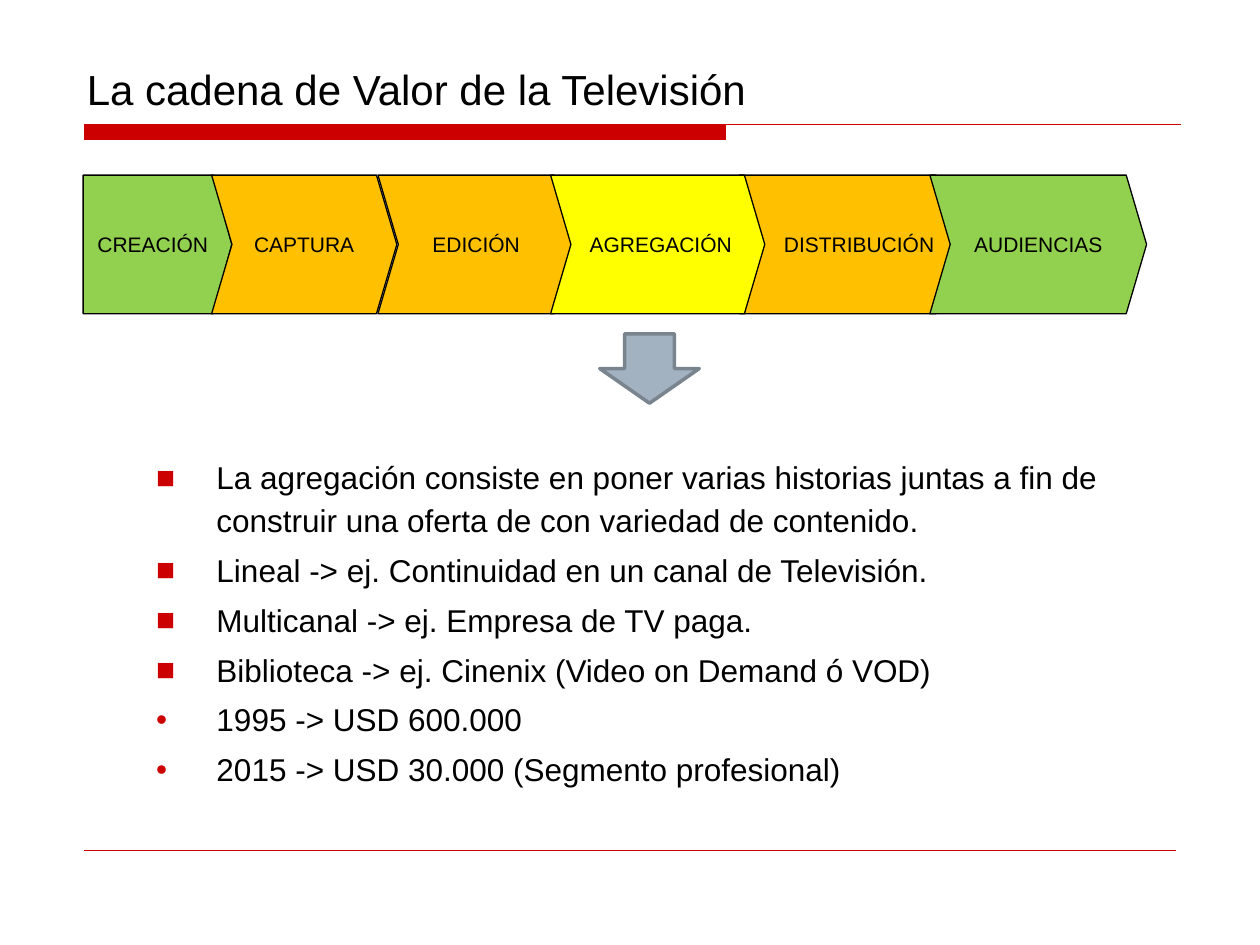
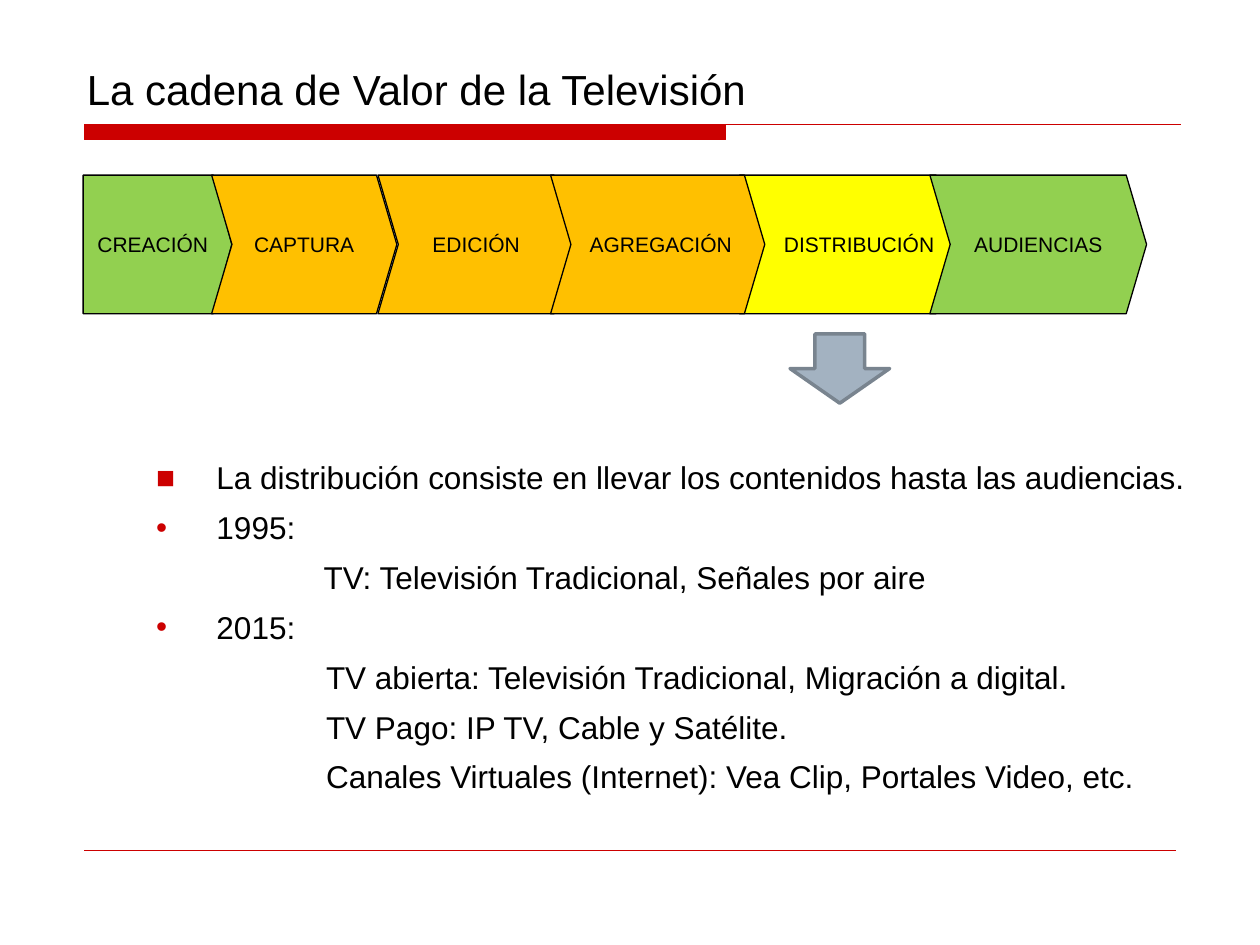
from dataclasses import dataclass

from lxml.etree import SubElement
from pptx import Presentation
from pptx.dml.color import RGBColor
from pptx.enum.shapes import MSO_CONNECTOR as Connector, MSO_SHAPE as Shape
from pptx.enum.text import MSO_ANCHOR as Anchor, PP_ALIGN as Align
from pptx.oxml.ns import qn
from pptx.util import Inches, Pt

FONT = "Arial"
BLACK, RED, YELLOW = "000000", "CC0000", "FFFF00"
GREEN, ORANGE = "92D050", "FFC000"
ARROW_FILL, ARROW_LINE = "A3B2C1", "79848F"
TITLE = "La cadena de Valor de la Televisión"
SQUARE, DOT = "■", "•"
HANGING = (0.99, -0.48)


@dataclass
class Box:
    left: float
    top: float
    width: float
    height: float

    def lengths(self):
        return [Inches(n) for n in (self.left, self.top, self.width, self.height)]


@dataclass
class Stage:
    name: str
    left: float
    width: float
    fill: str = ORANGE
    align: Align = Align.CENTER
    inset: float = 0.1
    outline: Shape = Shape.CHEVRON
    point: float = 0.147


TITLE_BOX = Box(0.59, 0.45, 7.72, 0.5)
HEADER_BOX = Box(0.67, 0.99, 8.7, 0.12)
CHAIN_BOX = Box(0.66, 1.39, 8.44, 1.1)
BODY_BOX = Box(0.63, 3.55, 9.1, 3.2)
FOOTER_BOX = Box(0.67, 6.75, 8.66, 0)

STAGES = [
    Stage("DISTRIBUCIÓN", 5.21, 1.72, align=Align.LEFT, inset=0.19),
    Stage("CREACIÓN", 0, 1.18, GREEN, outline=Shape.PENTAGON, point=0.134),
    Stage("CAPTURA", 1.02, 1.47),
    Stage("EDICIÓN", 2.34, 1.56),
    Stage("AGREGACIÓN", 3.71, 1.7, align=Align.RIGHT),
    Stage("AUDIENCIAS", 6.72, 1.72, GREEN, Align.LEFT, 0.19),
]

SLIDES = [
    ("AGREGACIÓN", [
        ("La agregación consiste en poner varias historias juntas a fin de "
         "construir una oferta de con variedad de contenido.", SQUARE, HANGING),
        ("Lineal -> ej. Continuidad en un canal de Televisión.", SQUARE, HANGING),
        ("Multicanal -> ej. Empresa de TV paga.", SQUARE, HANGING),
        ("Biblioteca -> ej. Cinenix (Video on Demand ó VOD)", SQUARE, HANGING),
        ("1995 -> USD 600.000", DOT, HANGING),
        ("2015 -> USD 30.000 (Segmento profesional)", DOT, HANGING),
    ]),
    ("DISTRIBUCIÓN", [
        ("La distribución consiste en llevar los contenidos hasta las audiencias.",
         SQUARE, HANGING),
        ("1995:", DOT, HANGING),
        ("TV: Televisión Tradicional, Señales por aire", None, (1.84, 0)),
        ("2015:", DOT, HANGING),
        ("TV abierta: Televisión Tradicional, Migración a digital.", None, (1.86, 0)),
        ("TV Pago: IP TV, Cable y Satélite.", None, (1.86, 0)),
        ("Canales Virtuales (Internet): Vea Clip, Portales Video, etc.", None, (1.86, 0)),
    ]),
]


def color(value):
    return RGBColor.from_string(value)


def set_font(paragraph, size):
    paragraph.font.name = FONT
    paragraph.font.size = Pt(size)
    paragraph.font.color.rgb = color(BLACK)


def set_indent(paragraph, margin, indent, bullet):
    properties = paragraph._p.get_or_add_pPr()
    properties.set("marL", str(Inches(margin)))
    properties.set("indent", str(Inches(indent)))
    if bullet:
        bullet_color = SubElement(properties, qn("a:buClr"))
        SubElement(bullet_color, qn("a:srgbClr"), val=RED)
        SubElement(properties, qn("a:buFont"), typeface=FONT)
        SubElement(properties, qn("a:buChar"), char=bullet)
    else:
        SubElement(properties, qn("a:buNone"))


def add_outline(slide, kind, box, fill, line, line_width):
    shape = slide.shapes.add_shape(kind, *box.lengths())
    shape.shadow.inherit = False
    shape.fill.solid()
    shape.fill.fore_color.rgb = color(fill)
    shape.line.color.rgb = color(line)
    shape.line.width = Pt(line_width)
    return shape


def add_rule(slide, box):
    left, top, width, _ = box.lengths()
    rule = slide.shapes.add_connector(Connector.STRAIGHT, left, top, left + width, top)
    rule.line.color.rgb = color(RED)
    rule.line.width = Pt(0.75)
    SubElement(rule._element.spPr, qn("a:effectLst"))


def add_header(slide, box):
    bar = Box(box.left, box.top, 5.09, box.height)
    add_outline(slide, Shape.RECTANGLE, bar, RED, RED, 0.75)
    add_rule(slide, box)


def add_title(slide, box):
    frame = slide.shapes.add_textbox(*box.lengths()).text_frame
    frame.word_wrap = True
    frame.vertical_anchor = Anchor.BOTTOM
    frame.text = TITLE
    set_font(frame.paragraphs[0], 24)


def add_chain(slide, box, active):
    for stage in STAGES:
        place = Box(box.left + stage.left, box.top, stage.width, box.height)
        fill = YELLOW if stage.name == active else stage.fill
        shape = add_outline(slide, stage.outline, place, fill, BLACK, 0.75)
        shape.adjustments[0] = stage.point
        frame = shape.text_frame
        frame.word_wrap = False
        frame.vertical_anchor = Anchor.MIDDLE
        frame.margin_left = Inches(stage.inset)
        frame.text = stage.name
        frame.paragraphs[0].alignment = stage.align
        set_font(frame.paragraphs[0], 12)
        if stage.name == active:
            arrow = Box(place.left + place.width / 2 - 0.46, box.top + 1.26, 0.79, 0.55)
            add_outline(slide, Shape.DOWN_ARROW, arrow, ARROW_FILL, ARROW_LINE, 2)


def add_body(slide, box, items):
    frame = slide.shapes.add_textbox(*box.lengths()).text_frame
    frame.word_wrap = True
    for index, (text, bullet, (margin, indent)) in enumerate(items):
        paragraph = frame.add_paragraph() if index else frame.paragraphs[0]
        paragraph.text = text
        set_indent(paragraph, margin, indent, bullet)
        paragraph.line_spacing = 1.13
        if index:
            paragraph.space_before = Pt(4.1)
        set_font(paragraph, 18)


def add_chain_slide(presentation, active, items):
    slide = presentation.slides.add_slide(presentation.slide_layouts[6])
    add_header(slide, HEADER_BOX)
    add_rule(slide, FOOTER_BOX)
    add_title(slide, TITLE_BOX)
    add_body(slide, BODY_BOX, items)
    add_chain(slide, CHAIN_BOX, active)


def main():
    presentation = Presentation()
    presentation.slide_width = Inches(10)
    presentation.slide_height = Inches(7.5)
    for active, items in SLIDES:
        add_chain_slide(presentation, active, items)
    presentation.save("out.pptx")


if __name__ == "__main__":
    main()
